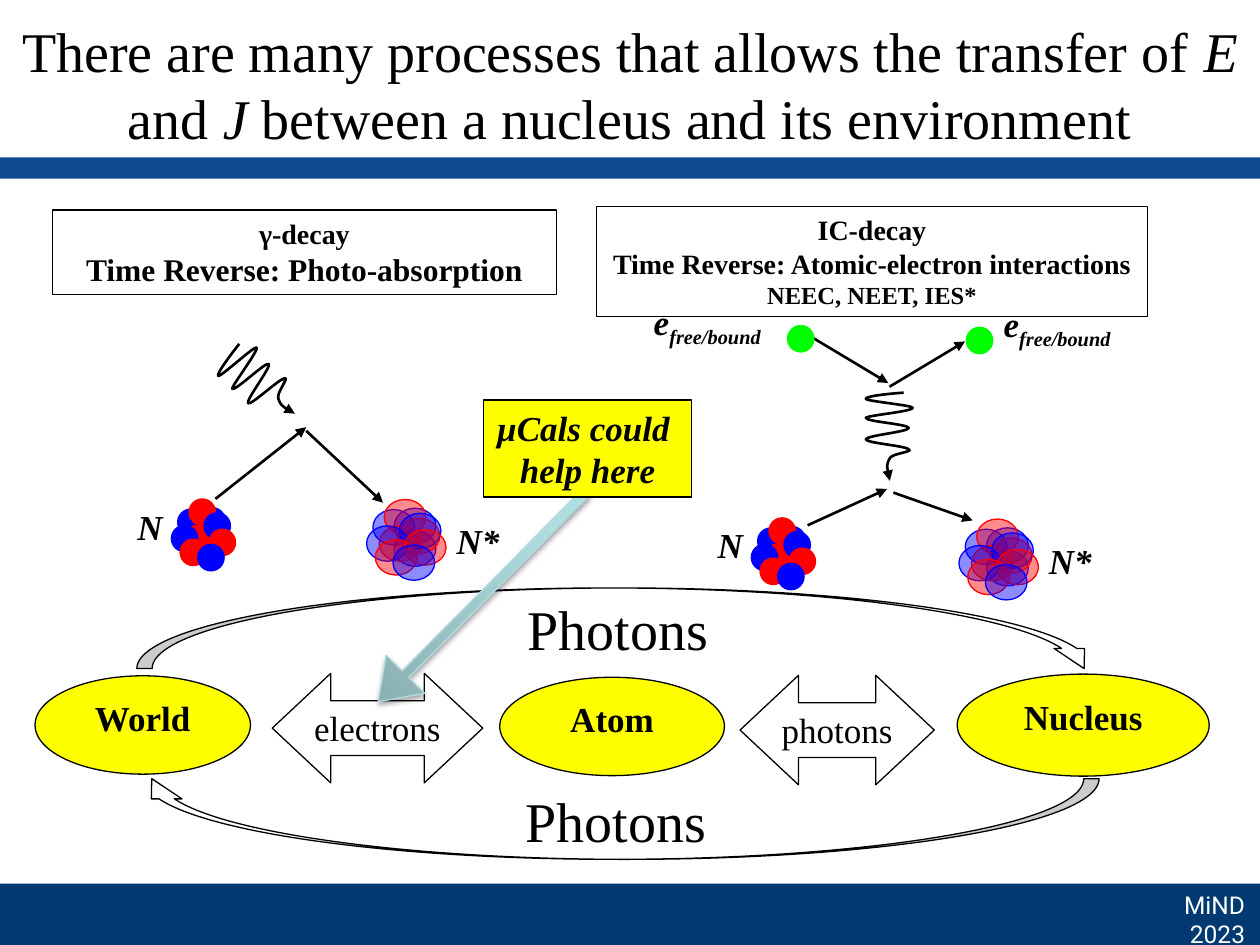
from dataclasses import dataclass
from typing import NamedTuple, Optional

from lxml import etree
from pptx import Presentation
from pptx.dml.color import RGBColor
from pptx.enum.shapes import MSO_CONNECTOR, MSO_SHAPE
from pptx.enum.text import MSO_ANCHOR, PP_ALIGN
from pptx.oxml.ns import qn
from pptx.util import Pt

RECT = MSO_SHAPE.RECTANGLE
OVAL = MSO_SHAPE.OVAL
CURVED_ARROW = MSO_SHAPE.CURVED_DOWN_ARROW
DOUBLE_ARROW = MSO_SHAPE.LEFT_RIGHT_ARROW
DOWN_ARROW = MSO_SHAPE.DOWN_ARROW
STRAIGHT = MSO_CONNECTOR.STRAIGHT
TOP = MSO_ANCHOR.TOP
LEFT, CENTER, RIGHT = PP_ALIGN.LEFT, PP_ALIGN.CENTER, PP_ALIGN.RIGHT
SERIF = "Times New Roman"
BLACK, WHITE, YELLOW = "000000", "FFFFFF", "FFFF00"
RED, BLUE, GREEN = "FF0000", "0000FF", "00FF00"


class Box(NamedTuple):
    left: float
    top: float
    width: float
    height: float


@dataclass
class Run:
    text: str
    size: float = 20
    bold: bool = False
    italic: bool = False
    color: str = BLACK
    font: str = SERIF
    subscript: bool = False


@dataclass
class Block:
    box: Box
    paragraphs: list[list[Run]]
    kind: Optional[int] = RECT
    fill: str = WHITE
    align: int = CENTER
    wrap: bool = False
    adjustments: tuple[float, ...] = ()
    outline: Optional[str] = BLACK
    flipped: bool = False


class Nucleon(NamedTuple):
    x: float
    y: float
    color: str


NUCLEONS = [
    Nucleon(3.6, 5.8, BLUE), Nucleon(15.8, 18, BLUE), Nucleon(15.8, 5, BLUE),
    Nucleon(18, 10.8, RED), Nucleon(7.2, 15.1, RED), Nucleon(10.1, 0, RED),
    Nucleon(0, 15.1, BLUE), Nucleon(18.7, 7.9, BLUE), Nucleon(5, 23, RED),
    Nucleon(21.6, 17.3, RED), Nucleon(15.1, 26, BLUE),
]
PHOTON_START = (8.6, -25.6)
PHOTON_CURVES = [
    ((-2.2, -24.8), (-13.7, -23.4), (-13, -22)),
    ((-11.5, -20.5), (13.7, -18.4), (13.7, -16.9)),
    ((13.7, -14.8), (-12.2, -12.6), (-13, -11.2)),
    ((-13, -9), (11.5, -7.6), (11.5, -5.4)),
    ((11.5, -3.2), (-13, -1.1), (-13, 1.1)),
    ((-13, 3.2), (9.4, 4.7), (11.5, 6.8)),
    ((14.4, 8.3), (2.2, 9), (0.7, 11.9)),
    ((-1.4, 15.5), (-0.7, 19.8), (0.7, 24.8)),
]


def rgb(color: str) -> RGBColor:
    return RGBColor.from_string(color)


def set_line(item, color: str = BLACK, width: float = 0.75, arrow: bool = False) -> None:
    item.line.color.rgb = rgb(color)
    item.line.width = Pt(width)
    if arrow:
        ln = item._element.spPr.find(qn("a:ln"))
        etree.SubElement(ln, qn("a:tailEnd"), type="triangle")


def add_figure(slide, kind: int, box: Box, fill: str, line: Optional[str] = BLACK,
               opacity: int = 100):
    figure = slide.shapes.add_shape(kind, *map(Pt, box))
    figure.shadow.inherit = False
    figure.fill.solid()
    figure.fill.fore_color.rgb = rgb(fill)
    if opacity < 100:
        color = figure._element.spPr.find(qn("a:solidFill"))[0]
        etree.SubElement(color, qn("a:alpha"), val=str(opacity * 1000))
    if line:
        set_line(figure, line)
    else:
        figure.line.fill.background()
    return figure


def add_block(slide, block: Block) -> None:
    if block.kind is None:
        holder = slide.shapes.add_textbox(*map(Pt, block.box))
    else:
        holder = add_figure(slide, block.kind, block.box, block.fill, block.outline)
        for index, value in enumerate(block.adjustments):
            holder.adjustments[index] = value
    if block.flipped:
        frame_xml = holder._element.spPr.find(qn("a:xfrm"))
        frame_xml.set("flipH", "1")
        frame_xml.set("flipV", "1")
    frame = holder.text_frame
    frame.word_wrap = block.wrap
    frame.vertical_anchor = TOP
    for index, runs in enumerate(block.paragraphs):
        paragraph = frame.add_paragraph() if index else frame.paragraphs[0]
        paragraph.alignment = block.align
        for part in runs:
            run = paragraph.add_run()
            run.text = part.text
            font = run.font
            font.name, font.size = part.font, Pt(part.size)
            font.bold, font.italic = part.bold, part.italic
            font.color.rgb = rgb(part.color)
            if part.subscript:
                run._r.get_or_add_rPr().set("baseline", "-25000")


def add_arrow(slide, x1: float, y1: float, x2: float, y2: float) -> None:
    arrow = slide.shapes.add_connector(STRAIGHT, Pt(x1), Pt(y1), Pt(x2), Pt(y2))
    set_line(arrow, width=1.5, arrow=True)
    etree.SubElement(arrow._element.spPr, qn("a:effectLst"))


def add_photon(slide, x: float, y: float, rotation: float = 0) -> None:
    offsets = [PHOTON_START] + [point for curve in PHOTON_CURVES for point in curve]
    points = [(Pt(x + dx), Pt(y + dy)) for dx, dy in offsets]
    builder = slide.shapes.build_freeform(*points[0])
    builder.add_line_segments(points[1:], close=False)
    photon = builder.convert_to_shape()
    segments = list(photon._element.spPr.iter(qn("a:lnTo")))
    for start in range(0, len(segments), 3):
        curve = etree.Element(qn("a:cubicBezTo"))
        segments[start].addprevious(curve)
        for segment in segments[start:start + 3]:
            curve.append(segment[0])
            segment.getparent().remove(segment)
    photon.shadow.inherit = False
    photon.fill.background()
    set_line(photon, width=1.5, arrow=True)
    photon.rotation = rotation


def add_nucleus(slide, x: float, y: float, excited: bool) -> None:
    width, height, opacity = (23.8, 20.2, 45) if excited else (15.1, 15.1, 100)
    for dx, dy, color in NUCLEONS:
        add_figure(slide, OVAL, Box(x + dx, y + dy, width, height), color, color, opacity)


def add_pointer(slide) -> None:
    pointer = add_figure(slide, DOWN_ARROW, Box(259.9, 257, 31, 168.5), "87ABAE", "B6DCDF")
    pointer.rotation = 44.8
    pointer.adjustments[0], pointer.adjustments[1] = 0.173, 0.713
    pointer.fill.gradient()
    pointer.fill.gradient_angle = 90
    for stop, color, position in zip(pointer.fill.gradient_stops, ("87ABAE", "AFDEE2"), (0, 0.8)):
        stop.color.rgb = rgb(color)
        stop.position = position
    effects = pointer._element.spPr.find(qn("a:effectLst"))
    shadow = etree.SubElement(effects, qn("a:outerShdw"), blurRad=str(Pt(3.1)),
                              dist=str(Pt(1.8)), dir="5400000", rotWithShape="0")
    color = etree.SubElement(shadow, qn("a:srgbClr"), val=BLACK)
    etree.SubElement(color, qn("a:alpha"), val="35000")


def bold(text: str, size: float = 20, italic: bool = False) -> list[Run]:
    return [Run(text, size, bold=True, italic=italic)]


def add_label(slide, x: float, y: float, width: float, text: str, subscript: str = "") -> None:
    runs = bold(text, italic=True)
    if subscript:
        runs.append(Run(subscript, bold=True, italic=True, subscript=True))
    add_block(slide, Block(Box(x, y, width, 31.7), [runs], None, align=LEFT))


def main() -> None:
    deck = Presentation()
    deck.slide_width, deck.slide_height = Pt(720), Pt(540)
    slide = deck.slides.add_slide(deck.slide_layouts[6])

    for left in (0, 360):
        add_figure(slide, RECT, Box(left, 90, 360, 12.2), "124A91", None)
    add_figure(slide, RECT, Box(0, 505, 720, 35), "003A70", None)
    event = [[Run(text, 14, color=WHITE, font="Roboto")] for text in ("MiND", "2023")]
    add_block(slide, Block(Box(668.9, 505, 49.7, 41), event, None, align=RIGHT))

    photons = [[Run("Photons", 32)]]
    add_block(slide, Block(Box(292.7, 445.7, 118.8, 46.1), photons, outline=None))
    gamma = [bold("γ-decay", 16), bold("Time Reverse: Photo-absorption", 18)]
    add_block(slide, Block(Box(30, 120, 288, 48.2), gamma, wrap=True))
    for left, top, paragraphs, flipped in ((78.2, 336, photons, False), (78, 445, [], True)):
        add_block(slide, Block(Box(left, top, 550.1, 46.1), paragraphs, CURVED_ARROW, wrap=True,
                               adjustments=(0.19, 0.379, 0.25), flipped=flipped))

    add_photon(slide, 149.4, 220, 312.5)
    add_photon(slide, 507.8, 250)
    for ends in ((123.1, 285.1, 175, 244.1), (175, 246.2, 218.9, 287.3),
                 (464.4, 193, 507.6, 218.9), (508.3, 221, 551.5, 195.1),
                 (461.5, 300.2, 506.9, 279.4), (510.5, 281.5, 555.8, 297.4)):
        add_arrow(slide, *ends)
    for x, y, excited in ((97.9, 285.1, False), (209.5, 285.4, True),
                          (429.3, 295.9, False), (548, 296.6, True)):
        add_nucleus(slide, x, y, excited)
    for x, y in ((552.2, 187), (450, 186)):
        add_figure(slide, OVAL, Box(x, y, 15.1, 15.1), GREEN, GREEN)
    for x, y, width, text in ((71.5, 285.1, 36, "N"), (253.9, 293.4, 46.1, "N*"),
                              (403, 295.5, 36, "N"), (592.3, 304.6, 46.1, "N*")):
        add_label(slide, x, y, width, text)
    for x, y in ((366.5, 168.2), (566.4, 169.2)):
        add_label(slide, x, y, 86, "e", "free/bound")

    conversion = [bold("IC-decay", 16), bold("Time Reverse: Atomic-electron interactions", 16),
                  bold("NEEC, NEET, IES*", 14)]
    add_block(slide, Block(Box(341, 118, 314.6, 63), conversion))
    for box, text in ((Box(155.6, 384.8, 120.3, 62.6), "electrons"),
                      (Box(422.9, 385.9, 111, 62.6), "photons")):
        add_block(slide, Block(box, [[Run(text)]], DOUBLE_ARROW, adjustments=(0.5, 0.534)))

    title = [Run("There are many processes that allows the transfer of ", 32),
             Run("E", 32, italic=True), Run(" and ", 32), Run("J ", 32, italic=True),
             Run("between a nucleus and its environment", 32)]
    add_block(slide, Block(Box(0, 5.8, 720, 85), [title], None, wrap=True))

    add_pointer(slide)
    hint = [bold("µCals could ", italic=True), bold("help here", italic=True)]
    add_block(slide, Block(Box(276.3, 228.6, 119, 55.4), hint, fill=YELLOW))
    for box, text in ((Box(547, 385.2, 144, 58.3), "Nucleus"),
                      (Box(285.6, 387, 128.4, 56.2), "Atom"),
                      (Box(20, 386.2, 123.1, 56.2), "World")):
        add_block(slide, Block(box, [bold(text)], OVAL, YELLOW, wrap=True))

    deck.save("out.pptx")


if __name__ == "__main__":
    main()
